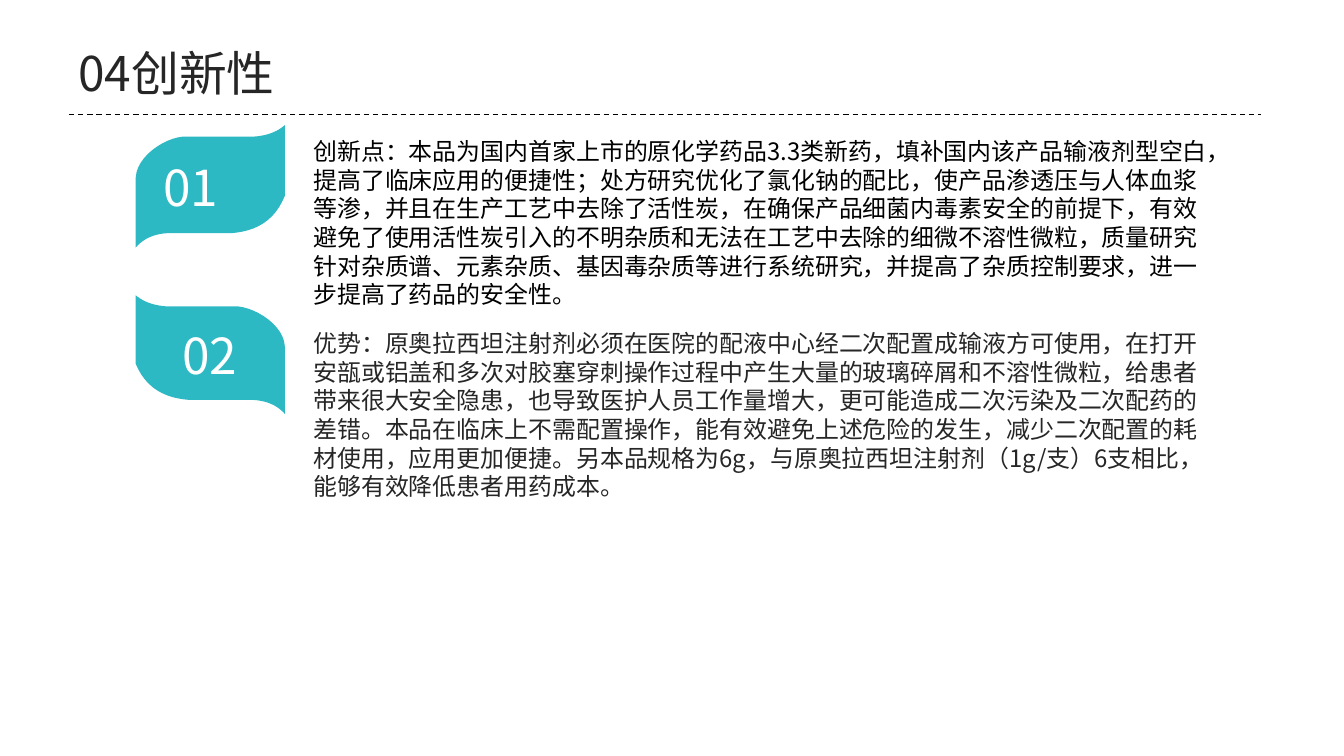
from pptx import Presentation
from pptx.dml.color import RGBColor
from pptx.enum.dml import MSO_LINE
from pptx.enum.shapes import MSO_CONNECTOR
from pptx.oxml.ns import qn
from pptx.util import Inches, Pt
from lxml import etree

# Content
TITLE = "04创新性"
POINTS = [
    "创新点：本品为国内首家上市的原化学药品3.3类新药，填补国内该产品输液剂型空白，提高了临床应用的便捷性；"
    "处方研究优化了氯化钠的配比，使产品渗透压与人体血浆等渗，并且在生产工艺中去除了活性炭，"
    "在确保产品细菌内毒素安全的前提下，有效避免了使用活性炭引入的不明杂质和无法在工艺中去除的细微不溶性微粒，"
    "质量研究针对杂质谱、元素杂质、基因毒杂质等进行系统研究，并提高了杂质控制要求，进一步提高了药品的安全性。",
    "优势：原奥拉西坦注射剂必须在医院的配液中心经二次配置成输液方可使用，"
    "在打开安瓿或铝盖和多次对胶塞穿刺操作过程中产生大量的玻璃碎屑和不溶性微粒，给患者带来很大安全隐患，"
    "也导致医护人员工作量增大，更可能造成二次污染及二次配药的差错。"
    "本品在临床上不需配置操作，能有效避免上述危险的发生，减少二次配置的耗材使用，应用更加便捷。"
    "另本品规格为6g，与原奥拉西坦注射剂（1g/支）6支相比，能够有效降低患者用药成本。",
]

FONT = "Noto Sans CJK SC"
TEAL = RGBColor(0x2D, 0xB9, 0xC4)
WHITE = RGBColor(0xFF, 0xFF, 0xFF)
BLACK = RGBColor(0x00, 0x00, 0x00)
DARK = RGBColor(0x26, 0x26, 0x26)

# Leaf outline: start, then Bezier curves (two controls, end), in inches
LEAF_X, LEAF_W, LEAF_H = 1.42, 1.56, 1.28
LEAF_START = (1.56, 0)
LEAF_CURVES = [
    ((1.49, 0.06), (1.39, 0.11), (1.23, 0.12)),
    ((0.99, 0.12), (0.74, 0.12), (0.49, 0.12)),
    ((0.29, 0.14), (0.01, 0.33), (0, 0.55)),
    ((0, 0.79), (0, 1.03), (0, 1.28)),
    ((0.07, 1.2), (0.17, 1.14), (0.33, 1.13)),
    ((0.55, 1.13), (0.77, 1.13), (1, 1.13)),
    ((1.25, 1.11), (1.45, 1.01), (1.56, 0.74)),
    ((1.56, 0.49), (1.56, 0.25), (1.56, 0)),
]
STEPS = 12

# Leaf top and height, mirrored, number box, text box, text colour
ROWS = [
    (1.31, 1.28, False, (1.61, 1.59, 0.85, 0.73), (3.18, 1.38, 9.6, 2.0), BLACK),
    (3.09, 1.24, True, (1.81, 3.35, 0.85, 0.73), (3.18, 3.39, 9.6, 2.0), DARK),
]


def leaf_points():
    points = [LEAF_START]
    for c1, c2, end in LEAF_CURVES:
        start = points[-1]
        for i in range(1, STEPS + 1):
            t = i / STEPS
            u = 1 - t
            points.append(tuple(
                u**3 * a + 3 * u * u * t * b + 3 * u * t * t * c + t**3 * d
                for a, b, c, d in zip(start, c1, c2, end)))
    return points


def add_leaf(s, top, height, mirrored):
    points = [(Inches(LEAF_X + (LEAF_W - x if mirrored else x)),
               Inches(top + y * height / LEAF_H)) for x, y in leaf_points()]
    builder = s.shapes.build_freeform(*points[0])
    builder.add_line_segments(points[1:], close=True)
    leaf = builder.convert_to_shape()
    leaf.shadow.inherit = False
    leaf.fill.solid()
    leaf.fill.fore_color.rgb = TEAL
    leaf.line.fill.background()


def add_text(s, box, text, size, color):
    tf = s.shapes.add_textbox(*map(Inches, box)).text_frame
    tf.word_wrap = True
    r = tf.paragraphs[0].add_run()
    r.text = text
    for name, value in {"size": Pt(size), "name": FONT}.items():
        setattr(r.font, name, value)
    r.font.color.rgb = color
    etree.SubElement(r.font._element, qn("a:ea"), typeface=FONT)


prs = Presentation()
prs.slide_width, prs.slide_height = Inches(14.06), Inches(7.91)
s = prs.slides.add_slide(prs.slide_layouts[6])

# Title and dashed rule
add_text(s, (0.72, 0.41, 3.08, 1.18), TITLE, 36, DARK)
rule = s.shapes.add_connector(
    MSO_CONNECTOR.STRAIGHT, Inches(0.72), Inches(1.2), Inches(13.19), Inches(1.2))
rule.line.color.rgb = BLACK
rule.line.width = Pt(1)
rule.line.dash_style = MSO_LINE.DASH
etree.SubElement(rule._element.spPr, qn("a:effectLst"))

# Numbered points
for number, (row, text) in enumerate(zip(ROWS, POINTS), 1):
    top, height, mirrored, number_box, text_box, color = row
    add_leaf(s, top, height, mirrored)
    add_text(s, number_box, f"{number:02}", 37.3, WHITE)
    add_text(s, text_box, text, 18, color)

prs.save("out.pptx")
